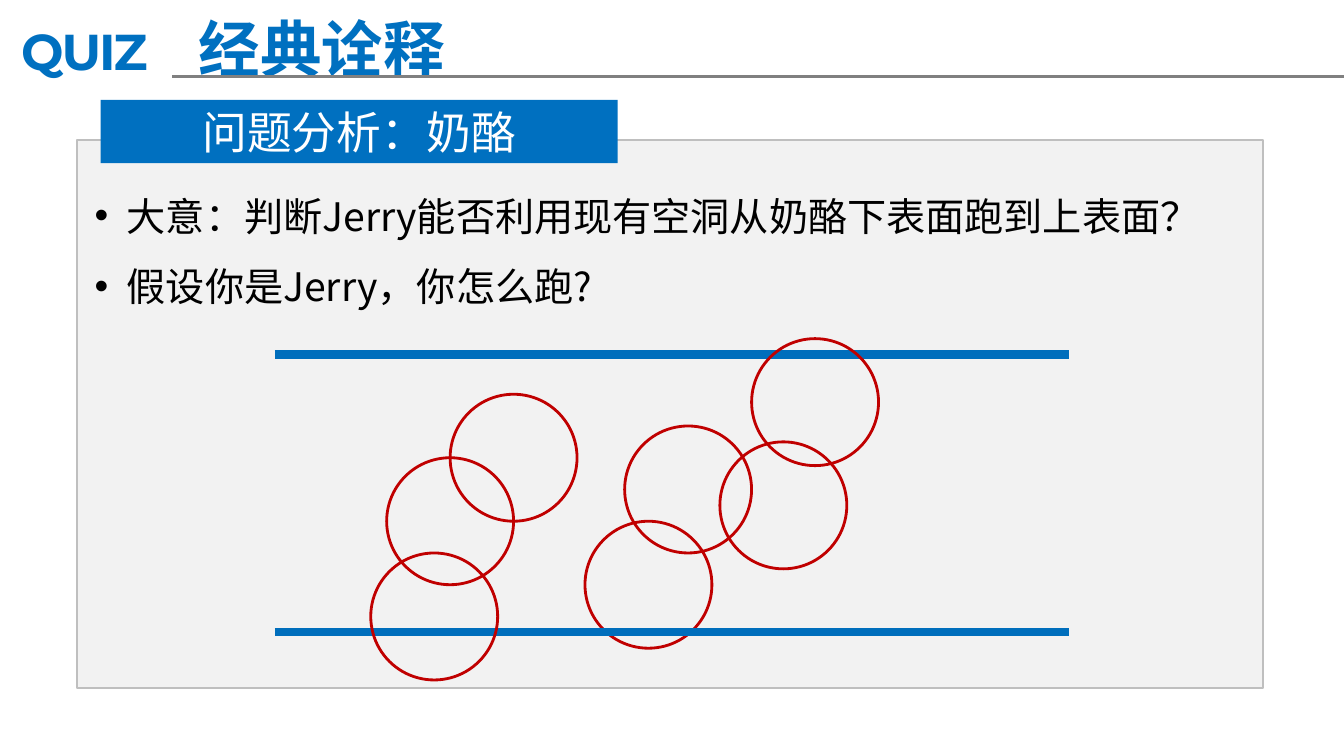
from lxml import etree
from pptx import Presentation
from pptx.dml.color import RGBColor
from pptx.enum.shapes import MSO_CONNECTOR, MSO_SHAPE
from pptx.enum.text import MSO_ANCHOR, PP_ALIGN
from pptx.oxml.ns import qn
from pptx.util import Inches, Pt

RECTANGLE, OVAL = MSO_SHAPE.RECTANGLE, MSO_SHAPE.OVAL
STRAIGHT = MSO_CONNECTOR.STRAIGHT
TOP, MIDDLE = MSO_ANCHOR.TOP, MSO_ANCHOR.MIDDLE
LEFT, CENTER = PP_ALIGN.LEFT, PP_ALIGN.CENTER

BLUE = RGBColor(0x00, 0x70, 0xC0)
SURFACE_BLUE = RGBColor(0x00, 0x6E, 0xBC)
RED = RGBColor(0xC0, 0x00, 0x00)
GRAY = RGBColor(0x80, 0x80, 0x80)
BORDER_GRAY = RGBColor(0xBF, 0xBF, 0xBF)
PANEL_GRAY = RGBColor(0xF2, 0xF2, 0xF2)
WHITE = RGBColor(0xFF, 0xFF, 0xFF)
BLACK = RGBColor(0x00, 0x00, 0x00)

CHINESE_FONT = "Noto Sans CJK SC"
LATIN_FONT = "Montserrat"

WIDTH, HEIGHT = Inches(13.34), Inches(7.5)
BULLET_INDENT = Inches(0.32)

# The holes sit on a square grid and each one spans eight cells.
HOLE_CELLS = 8
HOLE_CELL = Inches(1.26) / HOLE_CELLS
RIGHT_HOLES = [(13.5, 11.5), (16, 5.5), (22, 6.5), (24, 0)]
LEFT_HOLES = [(0, 13.5), (1, 7.5), (5, 3.5)]

POINTS = [
    "大意：判断Jerry能否利用现有空洞从奶酪下表面跑到上表面？",
    "假设你是Jerry，你怎么跑?",
]


def across(percent):
    return round(WIDTH * percent / 100)


def down(percent):
    return round(HEIGHT * percent / 100)


def area(left, top, width, height):
    """Turn percentages of the slide into a position and size."""
    return across(left), down(top), across(width), down(height)


def add_run(paragraph, text, size, color, font=CHINESE_FONT, bold=False):
    run = paragraph.add_run()
    run.text = text
    run.font.size = Pt(size)
    run.font.bold = bold
    run.font.color.rgb = color
    run.font.name = font
    properties = run._r.get_or_add_rPr()
    etree.SubElement(properties, qn("a:ea")).set("typeface", font)
    return run


def format_frame(frame, anchor=TOP, side=0.1, edge=0.05):
    """Set wrapping, anchor and insets, and return the first paragraph."""
    frame.word_wrap = True
    frame.vertical_anchor = anchor
    frame.margin_left = frame.margin_right = Inches(side)
    frame.margin_top = frame.margin_bottom = Inches(edge)
    return frame.paragraphs[0]


def add_bullet(paragraph):
    properties = paragraph._p.get_or_add_pPr()
    properties.set("marL", str(BULLET_INDENT))
    properties.set("indent", str(-BULLET_INDENT))
    etree.SubElement(properties, qn("a:buFont")).set("typeface", "Arial")
    etree.SubElement(properties, qn("a:buChar")).set("char", "•")


def add_figure(slide, kind, place, fill=None, line=None, line_width=2):
    shape = slide.shapes.add_shape(kind, *place)
    shape.shadow.inherit = False
    if fill is None:
        shape.fill.background()
    else:
        shape.fill.solid()
        shape.fill.fore_color.rgb = fill
    if line is None:
        shape.line.fill.background()
    else:
        shape.line.color.rgb = line
        shape.line.width = Pt(line_width)
    return shape


def add_level_line(slide, start, end, top, color, width):
    line = slide.shapes.add_connector(
        STRAIGHT, across(start), down(top), across(end), down(top))
    line.line.color.rgb = color
    line.line.width = Pt(width)
    etree.SubElement(line._element.spPr, qn("a:effectLst"))


def add_holes(slide, cells):
    size = round(HOLE_CELL * HOLE_CELLS)
    for column, row in cells:
        left = round(across(27.59) + column * HOLE_CELL)
        top = round(down(44.8) + row * HOLE_CELL)
        add_figure(slide, OVAL, (left, top, size, size), line=RED)


def add_header(slide):
    label = slide.shapes.add_textbox(*area(0.6, 1.73, 13.94, 9.87))
    paragraph = format_frame(label.text_frame, side=0.13, edge=0.07)
    run = add_run(paragraph, "QUIZ", 36, BLUE, LATIN_FONT, bold=True)
    run._r.get_or_add_rPr().set("spc", "-150")
    add_level_line(slide, 12.82, 100, 10.13, GRAY, 2)

    title = slide.shapes.title
    title.left, title.top, title.width, title.height = area(14.02, 0.67, 35.38, 11.2)
    paragraph = format_frame(title.text_frame, MIDDLE, edge=0)
    paragraph.alignment = LEFT
    add_run(paragraph, "经典诠释", 44, BLUE, bold=True)


def add_analysis(slide):
    add_figure(slide, RECTANGLE, area(5.7, 18.53, 88.31, 72.53),
               PANEL_GRAY, BORDER_GRAY, 1.5)
    heading = add_figure(slide, RECTANGLE, area(7.5, 13.2, 38.46, 8.4), BLUE)
    paragraph = format_frame(heading.text_frame, MIDDLE)
    paragraph.alignment = CENTER
    add_run(paragraph, "问题分析：奶酪", 32, WHITE)

    body = slide.shapes.add_textbox(*area(6.3, 21.6, 86.21, 20.13))
    paragraph = format_frame(body.text_frame)
    for index, point in enumerate(POINTS):
        if index:
            paragraph = body.text_frame.add_paragraph()
        paragraph.line_spacing = 1.5
        add_bullet(paragraph)
        add_run(paragraph, point, 28, BLACK)


def add_cheese(slide):
    for top, holes in ((46.87, RIGHT_HOLES), (83.6, LEFT_HOLES)):
        add_level_line(slide, 20.46, 79.54, top, SURFACE_BLUE, 6)
        add_holes(slide, holes)


def main():
    presentation = Presentation()
    presentation.slide_width, presentation.slide_height = WIDTH, HEIGHT
    slide = presentation.slides.add_slide(presentation.slide_layouts[5])
    add_header(slide)
    add_analysis(slide)
    add_cheese(slide)
    presentation.save("out.pptx")


if __name__ == "__main__":
    main()
